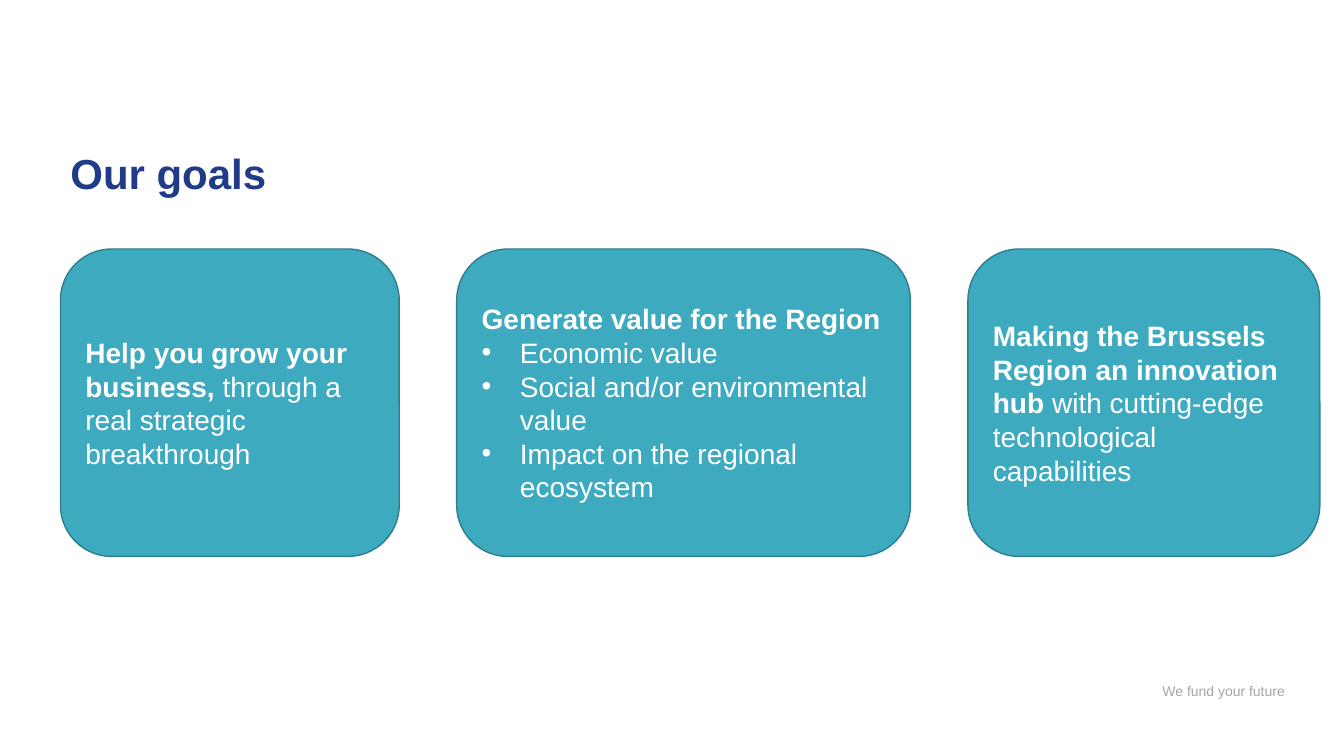
from pptx import Presentation
from pptx.dml.color import RGBColor
from pptx.enum.shapes import MSO_SHAPE as Shape
from pptx.enum.text import MSO_ANCHOR as Anchor, PP_ALIGN as Align
from pptx.oxml.ns import qn
from pptx.util import Inches, Pt
from lxml.etree import SubElement

NAVY = RGBColor(0x20, 0x3B, 0x87)
TEAL = RGBColor(0x3E, 0xAA, 0xC0)
DARK_TEAL = RGBColor(0x2E, 0x7E, 0x8E)
GREY = RGBColor(0xA6, 0xA6, 0xA6)
WHITE = RGBColor(0xFF, 0xFF, 0xFF)

MARGIN = 0.6
CARD_TOP, CARD_HEIGHT, CARD_GAP = 2.47, 3.05, 0.57
BULLET_INDENT = Inches(0.38)

GOALS = [
    (3.36, [("Help you grow your business, ", True),
            ("through a real strategic breakthrough", False)], []),
    (4.5, [("Generate value for the Region", True)],
     ["Economic value", "Social and/or environmental value",
      "Impact on the regional ecosystem"]),
    (3.49, [("Making the Brussels Region an innovation hub ", True),
            ("with cutting-edge technological capabilities", False)], []),
]


def add_run(paragraph, text, size, color, bold=False):
    run = paragraph.add_run()
    run.text = text
    run.font.name = "Arial"
    run.font.size = Pt(size)
    run.font.bold = bold
    run.font.color.rgb = color


def add_bullet(paragraph):
    properties = paragraph._p.get_or_add_pPr()
    properties.set("marL", str(BULLET_INDENT))
    properties.set("indent", str(-BULLET_INDENT))
    SubElement(properties, qn("a:buFont")).set("typeface", "Arial")
    SubElement(properties, qn("a:buChar")).set("char", "•")


def add_label(slide, box, text, size, color, bold=False,
              align=Align.LEFT, anchor=Anchor.TOP):
    label = slide.shapes.add_textbox(*[Inches(length) for length in box])
    frame = label.text_frame
    frame.word_wrap = True
    frame.vertical_anchor = anchor
    paragraph = frame.paragraphs[0]
    paragraph.alignment = align
    add_run(paragraph, text, size, color, bold)
    return label


def add_card(slide, left, width, heading, bullets):
    card = slide.shapes.add_shape(
        Shape.ROUNDED_RECTANGLE, Inches(left), Inches(CARD_TOP),
        Inches(width), Inches(CARD_HEIGHT))
    card.shadow.inherit = False
    card.fill.solid()
    card.fill.fore_color.rgb = TEAL
    card.line.color.rgb = DARK_TEAL
    card.line.width = Pt(1)
    frame = card.text_frame
    frame.word_wrap = True
    frame.vertical_anchor = Anchor.MIDDLE
    paragraph = frame.paragraphs[0]
    paragraph.alignment = Align.LEFT
    for text, bold in heading:
        add_run(paragraph, text, 20, WHITE, bold)
    for text in bullets:
        paragraph = frame.add_paragraph()
        paragraph.alignment = Align.LEFT
        add_bullet(paragraph)
        add_run(paragraph, text, 20, WHITE)


def main():
    presentation = Presentation()
    presentation.slide_width = Inches(13.33)
    presentation.slide_height = Inches(7.5)
    slide = presentation.slides.add_slide(presentation.slide_layouts[6])

    add_label(slide, (8.34, 6.65, 4.5, 0.4), "We fund your future", 10, GREY,
              align=Align.RIGHT, anchor=Anchor.MIDDLE)
    title = add_label(slide, (MARGIN, 1.37, 12.13, 0.61), "Our goals", 30,
                      NAVY, bold=True)
    title.text_frame.margin_top = Inches(0.09)

    left = MARGIN
    for width, heading, bullets in GOALS:
        add_card(slide, left, width, heading, bullets)
        left += width + CARD_GAP

    presentation.save("out.pptx")


if __name__ == "__main__":
    main()
